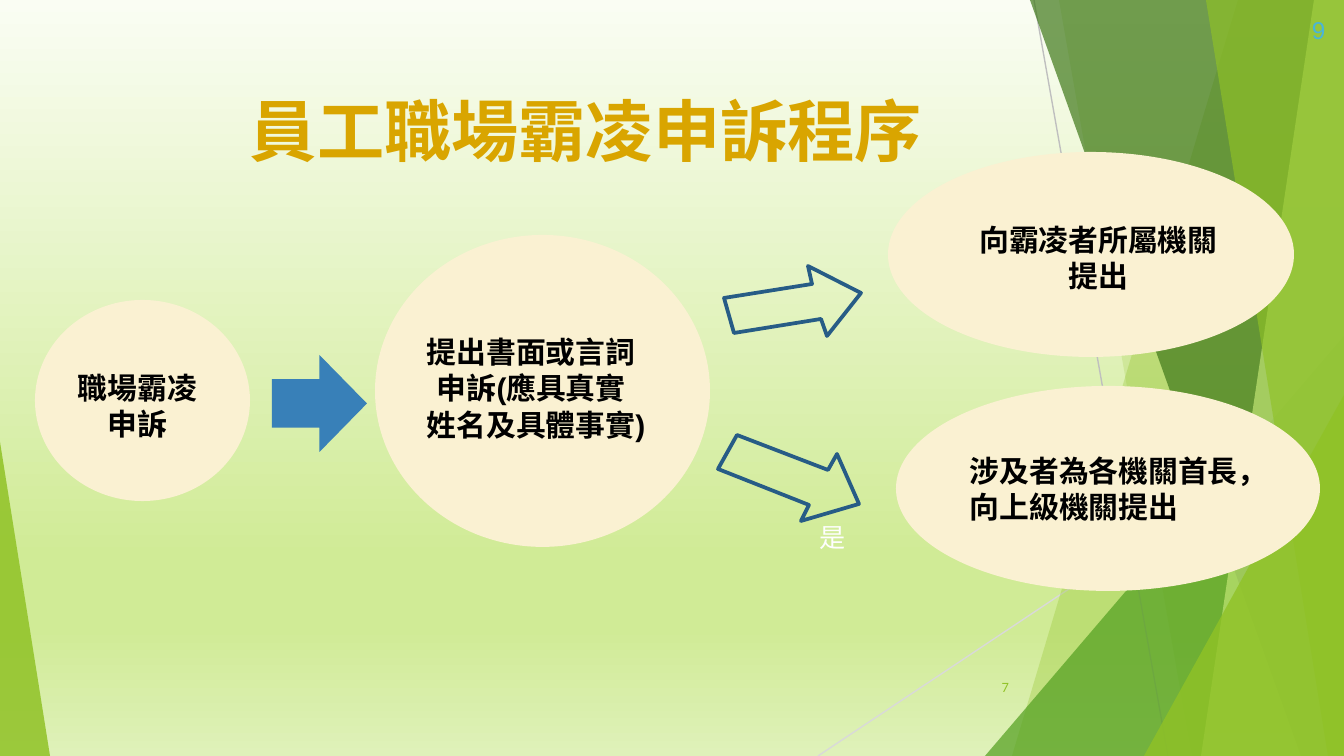
from typing import NamedTuple

from lxml import etree
from pptx import Presentation
from pptx import util as u
from pptx.dml.color import RGBColor
from pptx.enum import shapes, text
from pptx.oxml.ns import qn

PX = 914400 / 134.4  # EMU per px
WIDTH, HEIGHT = 1344, 756
COLORS = {
    "lime": "90C226", "green": "54A021", "forest": "3F7819", "pale": "C0E474",
    "cream": "FAF1D2", "blue": "3880B8", "navy": "275C86", "gold": "D9A500",
    "black": "000000", "white": "FEFEFE", "sky": "49B4D8",
    "ray": "BFBFBF", "light ray": "D9D9D9",
}
BACKGROUND = [(0, "FAFDF3"), (74, "D0EB96"), (83, "D0EB96"), (100, "DFF1B9")]
TC, SC, LATIN = "Noto Sans CJK TC", "Noto Sans CJK SC", "Arial"
ALIGN = text.PP_ALIGN


class Box(NamedTuple):
    left: int
    top: int
    width: int
    height: int


class Band(NamedTuple):
    """Area between a slanted left edge and the right side of the slide."""
    top_x: int
    bottom_x: int
    color: str
    alpha: int


class Triangle(NamedTuple):
    box: Box
    apex: int
    color: str
    alpha: int


class Style(NamedTuple):
    size: float
    color: str = "black"
    font: str = TC
    bold: bool = False
    align: ALIGN = ALIGN.LEFT
    spacing: float | None = None


BODY = Style(16, bold=True, spacing=19.5)
CENTERED = BODY._replace(align=ALIGN.CENTER)


class Label(NamedTuple):
    box: Box
    lines: list[str]
    style: Style
    indents: tuple[int, ...] = ()


DECOR = [
    Band(1238, 1012, "lime", 30),
    Band(1059, 1192, "lime", 20),
    Triangle(Box(985, 336, 359, 420), 1, "green", 72),
    Band(1030, 1301, "forest", 70),
    Band(1314, 1201, "pale", 70),
    Band(1206, 1328, "lime", 65),
    Triangle(Box(1144, 395, 200, 361), 1, "lime", 80),
    Triangle(Box(0, 442, 50, 314), 0, "lime", 85),
]
RAYS = [((1034, 0), (1168, HEIGHT), "ray"), ((WIDTH, 406), (818, HEIGHT), "light ray")]
OVALS = [Box(35, 300, 215, 201), Box(375, 235, 335, 312),
         Box(888, 152, 406, 205), Box(896, 386, 424, 205)]
BRANCH_ARROWS = [
    [(724, 298), (812, 284), (808, 266), (861, 293), (827, 336), (821, 319), (734, 333)],
    [(737, 435), (828, 470), (837, 454), (859, 504), (801, 521), (809, 505), (718, 469)],
]
LABELS = [
    Label(Box(1312, 15, 32, 30), ["9"], Style(13, "sky", LATIN)),
    Label(Box(978, 221, 241, 73), ["向霸凌者所屬機關", "提出"], CENTERED),
    Label(Box(73, 369, 129, 73), ["職場霸凌", "申訴"], CENTERED),
    Label(Box(427, 333, 220, 109),
          ["提出書面或言詞", "申訴(應具真實", "姓名及具體事實)"], BODY, (0, 10, 0)),
    Label(Box(970, 452, 309, 73), ["涉及者為各機關首長，", "向上級機關提出"], BODY),
    Label(Box(820, 521, 44, 35), ["是"], Style(14, "white")),
    Label(Box(948, 667, 61, 40), ["7"], Style(6.8, "lime", "Lato", align=ALIGN.RIGHT)),
]


def emu(*lengths: int) -> list[int]:
    return [round(length * PX) for length in lengths]


def rgb(name: str) -> RGBColor:
    return RGBColor.from_string(COLORS[name])


def paint(shape, color: str, alpha: int = 100) -> None:
    shape.shadow.inherit = False
    shape.line.fill.background()
    shape.fill.solid()
    shape.fill.fore_color.rgb = rgb(color)
    if alpha < 100:
        tint = shape.element.spPr.find(".//" + qn("a:srgbClr"))
        etree.SubElement(tint, qn("a:alpha"), val=str(alpha * 1000))


def add_preset(page, kind: shapes.MSO_SHAPE, box: Box, color: str, alpha: int = 100):
    shape = page.shapes.add_shape(kind, *emu(*box))
    paint(shape, color, alpha)
    return shape


def add_polygon(page, points: list[tuple[int, int]]):
    builder = page.shapes.build_freeform(*points[0], scale=PX)
    builder.add_line_segments(points[1:], close=True)
    return builder.convert_to_shape()


def add_ray(page, start: tuple[int, int], end: tuple[int, int], color: str) -> None:
    ray = page.shapes.add_connector(shapes.MSO_CONNECTOR.STRAIGHT, *emu(*start, *end))
    ray.line.color.rgb = rgb(color)
    ray.line.width = u.Pt(0.75)
    etree.SubElement(ray.element.spPr, qn("a:effectLst"))


def write(shape, lines: list[str], style: Style, indents: tuple[int, ...] = ()) -> None:
    frame = shape.text_frame
    frame.word_wrap = True
    frame.auto_size = text.MSO_AUTO_SIZE.NONE
    frame.vertical_anchor = text.MSO_ANCHOR.TOP
    frame.margin_left = frame.margin_top = frame.margin_right = frame.margin_bottom = 0
    for index, line in enumerate(lines):
        para = frame.paragraphs[0] if index == 0 else frame.add_paragraph()
        para.alignment = style.align
        if style.spacing:
            para.line_spacing = u.Pt(style.spacing)
        font = para.font
        font.size, font.bold, font.name = u.Pt(style.size), style.bold, style.font
        font.color.rgb = rgb(style.color)
        properties = para._p.pPr
        etree.SubElement(properties.find(qn("a:defRPr")), qn("a:ea"), typeface=style.font)
        if indents:
            properties.set("indent", str(emu(indents[index])[0]))
        # Parentheses take the Latin font
        for piece in line.replace("(", "\n(\n").replace(")", "\n)").split("\n"):
            span = para.add_run()
            span.text = piece
            if piece in ("(", ")"):
                span.font.name = LATIN


def set_background(page) -> None:
    fill = page.background.fill
    fill.gradient()
    fill.gradient_angle = 270
    stops = page.element.find(".//" + qn("a:gsLst"))
    for stop in list(stops):
        stops.remove(stop)
    for position, color in BACKGROUND:
        stop = etree.SubElement(stops, qn("a:gs"), pos=str(position * 1000))
        etree.SubElement(stop, qn("a:srgbClr"), val=color)


def main() -> None:
    deck = Presentation()
    deck.slide_width, deck.slide_height = emu(WIDTH, HEIGHT)
    page = deck.slides.add_slide(deck.slide_layouts[5])
    set_background(page)

    # Title
    title = page.shapes.title
    title.left, title.top, title.width, title.height = emu(148, 88, 876, 82)
    write(title, ["員工職場霸凌申訴程序"],
          Style(36, "gold", SC, True, ALIGN.CENTER, 44))

    # Decorative rays and translucent facets
    for start, end, color in RAYS:
        add_ray(page, start, end, color)
    for part in DECOR:
        if isinstance(part, Band):
            band = add_polygon(page, [(part.top_x, 0), (WIDTH, 0),
                                      (WIDTH, HEIGHT), (part.bottom_x, HEIGHT)])
            paint(band, part.color, part.alpha)
        else:
            facet = add_preset(page, shapes.MSO_SHAPE.ISOSCELES_TRIANGLE,
                               part.box, part.color, part.alpha)
            facet.adjustments[0] = part.apex

    # Steps and arrows
    for box in OVALS:
        add_preset(page, shapes.MSO_SHAPE.OVAL, box, "cream")
    add_preset(page, shapes.MSO_SHAPE.RIGHT_ARROW, Box(272, 355, 95, 97), "blue")
    for points in BRANCH_ARROWS:
        arrow = add_polygon(page, points)
        arrow.shadow.inherit = False
        arrow.fill.background()
        arrow.line.color.rgb = rgb("navy")
        arrow.line.width = u.Pt(2)

    # Texts
    for label in LABELS:
        box = page.shapes.add_textbox(*emu(*label.box))
        write(box, label.lines, label.style, label.indents)
        if label.lines == ["7"]:
            box.text_frame.vertical_anchor = text.MSO_ANCHOR.MIDDLE

    deck.save("out.pptx")


if __name__ == "__main__":
    main()
